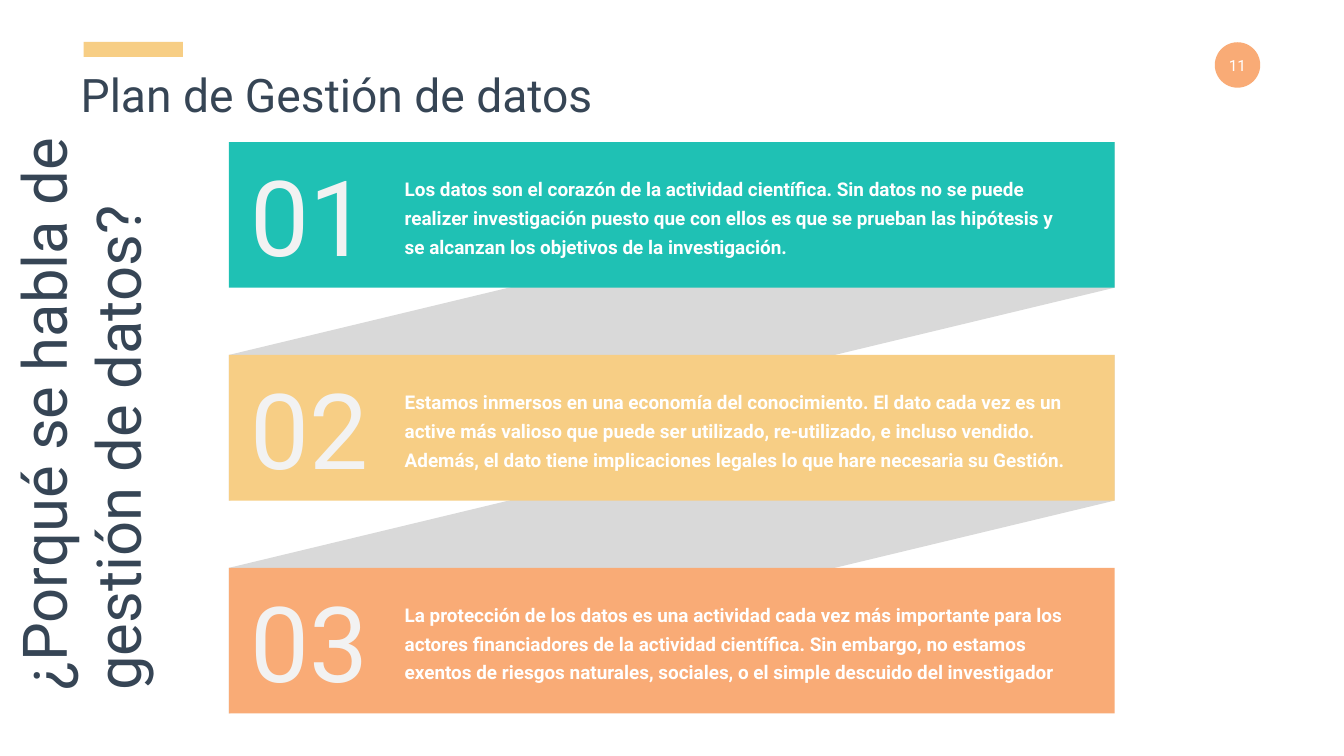
"""Build the slide on why data management matters: three numbered bands joined by ribbons."""
from dataclasses import dataclass

from pptx import Presentation
from pptx.dml.color import RGBColor
from pptx.enum import shapes, text
from pptx.util import Cm, Pt


@dataclass(frozen=True)
class Theme:
    font: str = "Roboto"
    ink: str = "364555"
    white: str = "FFFFFF"
    numeral: str = "F2F2F2"
    ribbon: str = "D9D9D9"
    teal: str = "1FC1B4"
    yellow: str = "F7CE85"
    orange: str = "F9AB76"
    page_size: int = 22
    body_size: int = 27
    title_size: int = 66
    question_size: int = 88
    numeral_size: int = 150


@dataclass(frozen=True)
class Box:
    left: float
    top: float
    width: float
    height: float

    def lengths(self) -> tuple:
        return Cm(self.left), Cm(self.top), Cm(self.width), Cm(self.height)

    def inner(self, left: float, width: float, height: float) -> "Box":
        return Box(left, self.top + (self.height - height) / 2, width, height)


@dataclass(frozen=True)
class Reason:
    number: str
    color: str
    text_height: float
    wording: str


THEME = Theme()
BAND_LEFT, BAND_TOP, BAND_WIDTH, BAND_HEIGHT, BAND_PITCH = 11.53, 7.16, 44.63, 7.34, 10.73
REASONS = [
    Reason("01", THEME.teal, 4.65,
           "Los datos son el corazón de la actividad científica. Sin datos no se puede "
           "realizer investigación puesto que con ellos es que se prueban las hipótesis "
           "y se alcanzan los objetivos de la investigación."),
    Reason("02", THEME.yellow, 6.1,
           "Estamos inmersos en una economía del conocimiento. El dato cada vez es un "
           "active más valioso que puede ser utilizado, re-utilizado, e incluso vendido. "
           "Además, el dato tiene implicaciones legales lo que hare necesaria su Gestión."),
    Reason("03", THEME.orange, 6.1,
           "La protección de los datos es una actividad cada vez más importante para los "
           "actores financiadores de la actividad científica. Sin embargo, no estamos "
           "exentos de riesgos naturales, sociales, o el simple descuido del investigador"),
]


def paint(shape, color: str) -> None:
    shape.shadow.inherit = False
    shape.fill.solid()
    shape.fill.fore_color.rgb = RGBColor.from_string(color)
    shape.line.fill.background()


def add_block(slide, box: Box, color: str, kind=shapes.MSO_SHAPE.RECTANGLE) -> None:
    paint(slide.shapes.add_shape(kind, *box.lengths()), color)


def write(shape, wording: str, size: int, color: str, wrap: bool = True,
          align=text.PP_ALIGN.LEFT, anchor=text.MSO_ANCHOR.TOP, bold: bool = False):
    frame = shape.text_frame
    frame.text = wording
    frame.word_wrap = wrap
    frame.auto_size = text.MSO_AUTO_SIZE.NONE
    frame.vertical_anchor = anchor
    paragraph = frame.paragraphs[0]
    paragraph.alignment = align
    font = paragraph.font
    font.name, font.size, font.bold = THEME.font, Pt(size), bold
    font.color.rgb = RGBColor.from_string(color)
    return paragraph


def add_label(slide, box: Box, wording: str, size: int, color: str) -> None:
    write(slide.shapes.add_textbox(*box.lengths()), wording, size, color, wrap=False,
          align=text.PP_ALIGN.CENTER, anchor=text.MSO_ANCHOR.MIDDLE)


def band_box(index: int) -> Box:
    return Box(BAND_LEFT, BAND_TOP + index * BAND_PITCH, BAND_WIDTH, BAND_HEIGHT)


def add_ribbon(slide, upper: Box, lower: Box) -> None:
    right = upper.left + upper.width
    builder = slide.shapes.build_freeform(Cm(lower.left), Cm(lower.top))
    builder.add_line_segments([
        (Cm(right), Cm(upper.top)),
        (Cm(right), Cm(upper.top + upper.height)),
        (Cm(lower.left), Cm(lower.top + lower.height)),
    ])
    paint(builder.convert_to_shape(), THEME.ribbon)


def add_reason(slide, box: Box, reason: Reason) -> None:
    add_block(slide, box, reason.color)
    add_label(slide, box.inner(12.29, 6.58, 6.68), reason.number,
              THEME.numeral_size, THEME.numeral)
    body = slide.shapes.add_textbox(*box.inner(20.14, 34.01, reason.text_height).lengths())
    paragraph = write(body, reason.wording, THEME.body_size, THEME.white,
                      anchor=text.MSO_ANCHOR.MIDDLE, bold=True)
    paragraph.line_spacing = Pt(41)
    paragraph.space_before = Pt(6.5)


def add_heading(slide) -> None:
    title = slide.shapes.title
    title.left, title.top, title.width, title.height = Box(3.81, 3.2, 27.79, 3.07).lengths()
    write(title, "Plan de Gestión de datos", THEME.title_size, THEME.ink, wrap=False)
    add_block(slide, Box(4.22, 2.11, 5, 0.76), THEME.yellow)
    add_block(slide, Box(61.21, 2.13, 2.29, 2.29), THEME.orange, shapes.MSO_SHAPE.OVAL)
    add_label(slide, Box(61.62, 2.69, 1.47, 1.19), "11", THEME.page_size, THEME.white)


def add_question(slide) -> None:
    question = slide.shapes.add_textbox(*Box(-8.33, 15.06, 28.47, 11.53).lengths())
    question.rotation = 270
    write(question, "¿Porqué se habla de gestión de datos?", THEME.question_size, THEME.ink)


def main() -> None:
    presentation = Presentation()
    presentation.slide_width, presentation.slide_height = Cm(67.72), Cm(38.1)
    slide = presentation.slides.add_slide(presentation.slide_layouts[5])
    add_heading(slide)
    bands = [band_box(index) for index in range(len(REASONS))]
    for upper, lower in zip(bands, bands[1:]):
        add_ribbon(slide, upper, lower)
    for box, reason in zip(bands, REASONS):
        add_reason(slide, box, reason)
    add_question(slide)
    presentation.save("out.pptx")


if __name__ == "__main__":
    main()
